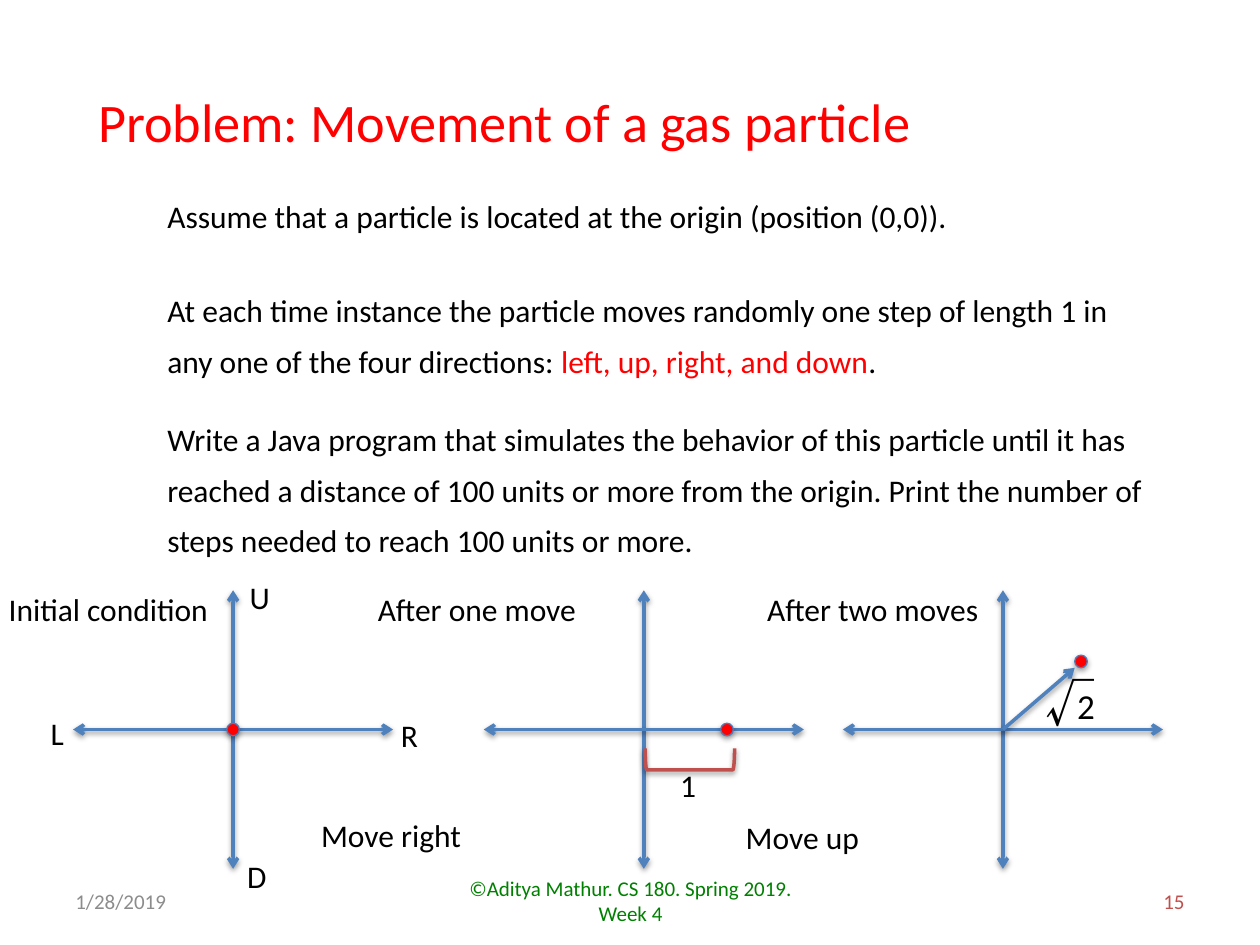
from lxml import etree
from pptx import Presentation, util as u
from pptx.dml.color import RGBColor
from pptx.enum import shapes, text
from pptx.oxml import parse_xml
from pptx.oxml.ns import nsdecls, qn

COLORS = {"red": "FF0000", "black": "000000", "gray": "8C8C8C", "green": "008000",
          "brick": "C0504D", "axis": "4F81BD", "rim": "4B7EBC"}

# Grid of 100 columns by 75 rows of square cells
COLUMNS, ROWS = 100, 75
CELL = u.Inches(0.1)

AXIS_ROW = 57.9                    # row of every horizontal axis
ORIGINS = (18.5, 51.1, 79.6)       # column of each vertical axis
HALF_WIDTH, HALF_HEIGHT = 12.7, 11.05
DOT = 1.0
FOOTER_ROW, FOOTER_ROWS = 69.5, 4
LABEL_ROWS = 4


def cells(*counts):
    return [round(count * CELL) for count in counts]


def rgb(name):
    return RGBColor.from_string(COLORS[name])


def add_text(page, frame, *spans, size=18, font="Calibri", wrap=True, leading=None,
             align=text.PP_ALIGN.LEFT, anchor=text.MSO_ANCHOR.TOP):
    """Add a one-paragraph box; each span is (words, color name)."""
    box = page.shapes.add_textbox(*cells(*frame)).text_frame
    box.word_wrap = wrap
    box.vertical_anchor = anchor
    para = box.paragraphs[0]
    para.alignment = align
    if leading:
        para.line_spacing = u.Pt(leading)
    para.font.size = u.Pt(size)
    para.font.name = font
    for words, color in spans:
        span = para.add_run()
        span.text = words
        span.font.color.rgb = rgb(color)
        if font != "Calibri":
            fallback = etree.SubElement(span.font._element, qn("a:ea"))
            fallback.set("typeface", font)


def add_label(page, words, left, top, width, wrap=False):
    add_text(page, (left, top, width, LABEL_ROWS), (words, "black"), wrap=wrap)


def add_shadow(shape, opacity):
    shape._element.spPr.append(parse_xml(
        f'<a:effectLst {nsdecls("a")}>'
        f'<a:outerShdw blurRad="{u.Pt(3.1)}" dist="{u.Pt(1.6)}" dir="5400000" rotWithShape="0">'
        f'<a:srgbClr val="{COLORS["black"]}"><a:alpha val="{opacity * 1000}"/></a:srgbClr>'
        '</a:outerShdw></a:effectLst>'))


def set_line(shape, color, width):
    shape.line.color.rgb = rgb(color)
    shape.line.width = u.Pt(width)


def add_arrow(page, start, end, ends=("headEnd", "tailEnd")):
    arrow = page.shapes.add_connector(shapes.MSO_CONNECTOR.STRAIGHT, *cells(*start, *end))
    set_line(arrow, "axis", 2)
    outline = arrow._element.spPr.find(qn("a:ln"))
    for tag in ends:
        etree.SubElement(outline, qn(f"a:{tag}")).set("type", "arrow")
    add_shadow(arrow, 38)


def add_axes(page, column):
    add_arrow(page, (column, AXIS_ROW - HALF_HEIGHT), (column, AXIS_ROW + HALF_HEIGHT))
    add_arrow(page, (column - HALF_WIDTH, AXIS_ROW), (column + HALF_WIDTH, AXIS_ROW))


def add_particle(page, column, row):
    dot = page.shapes.add_shape(shapes.MSO_SHAPE.OVAL,
                                *cells(column - DOT / 2, row - DOT / 2, DOT, DOT))
    dot.fill.solid()
    dot.fill.fore_color.rgb = rgb("red")
    set_line(dot, "rim", 0.75)
    add_shadow(dot, 35)


def add_bracket(page, frame):
    bracket = page.shapes.add_shape(shapes.MSO_SHAPE.LEFT_BRACKET, *cells(*frame))
    bracket.rotation = 270
    bracket.fill.background()
    set_line(bracket, "brick", 2)
    add_shadow(bracket, 38)


def add_footer(page):
    for words, color, left, width, align in (
            ("1/28/2019", "gray", 5, 23.3, text.PP_ALIGN.LEFT),
            ("©Aditya Mathur. CS 180. Spring 2019. Week 4", "green", 34.2, 31.7,
             text.PP_ALIGN.CENTER),
            ("15", "brick", 71.7, 23.3, text.PP_ALIGN.RIGHT)):
        add_text(page, (left, FOOTER_ROW, width, FOOTER_ROWS), (words, color), size=12,
                 align=align, anchor=text.MSO_ANCHOR.MIDDLE)


def add_problem(page):
    add_text(page, (6.8, 6.5, 83.6, 6.2), ("Problem: Movement of a gas particle", "red"), size=31)
    statements = (
        (14.1, 4.9, [("Assume that a particle is located at the origin (position (0,0)).",
                      "black")]),
        (21.6, 9, [("At each time instance the particle moves randomly one step of length 1 in "
                    "any one of the four directions:", "black"),
                   (" left, up, right, and down", "red"), (".", "black")]),
        (31.8, 13, [("Write a Java program that simulates the behavior of this particle until "
                     "it has reached a distance of 100 units or more from the origin. Print the "
                     "number of steps needed to reach 100 units or more.", "black")]))
    for top, height, spans in statements:
        add_text(page, (12.3, top, 80, height), *spans, leading=29)


def add_diagrams(page):
    first, second, third = ORIGINS

    # Start: particle at the origin, with the four directions
    add_axes(page, first)
    add_particle(page, first, AXIS_ROW)
    for letter, left, top in (("D", 19, 67.5), ("R", 31.2, 56.3),
                              ("U", 19.2, 45.4), ("L", 3.4, 56.2)):
        add_label(page, letter, left, top, 1.6, wrap=True)

    # One move to the right
    add_axes(page, second)
    add_particle(page, second + 6.6, AXIS_ROW)
    add_label(page, "1", 53, 60.3, 3.3)
    add_bracket(page, (53.9, 56.7, 1.7, 7.1))
    add_label(page, "Move right", 24.5, 64.3, 13.3)

    # Then one move up, at distance root two
    add_axes(page, third)
    add_particle(page, third + 6.2, 52.5)
    add_arrow(page, (third, AXIS_ROW), (third + 5.7, 53), ends=("tailEnd",))
    add_text(page, (82, 53, 5.9, 5.7), ("√", "black"), size=28,
             font="Noto Sans CJK JP", wrap=False)
    add_text(page, (84.5, 53.8, 3.4, 4.4), ("2", "black"), size=20, wrap=False)
    add_label(page, "Move up", 58.2, 64.4, 11.1)

    # Captions
    for words, left, width in (("Initial condition", -0.3, 18.1),
                               ("After one move", 29, 18), ("After two moves", 59.9, 19)):
        add_label(page, words, left, 46.3, width)


def main():
    deck = Presentation()
    deck.slide_width, deck.slide_height = cells(COLUMNS, ROWS)
    page = deck.slides.add_slide(deck.slide_layouts[6])
    add_problem(page)
    add_footer(page)
    add_diagrams(page)
    deck.save("out.pptx")


if __name__ == "__main__":
    main()
